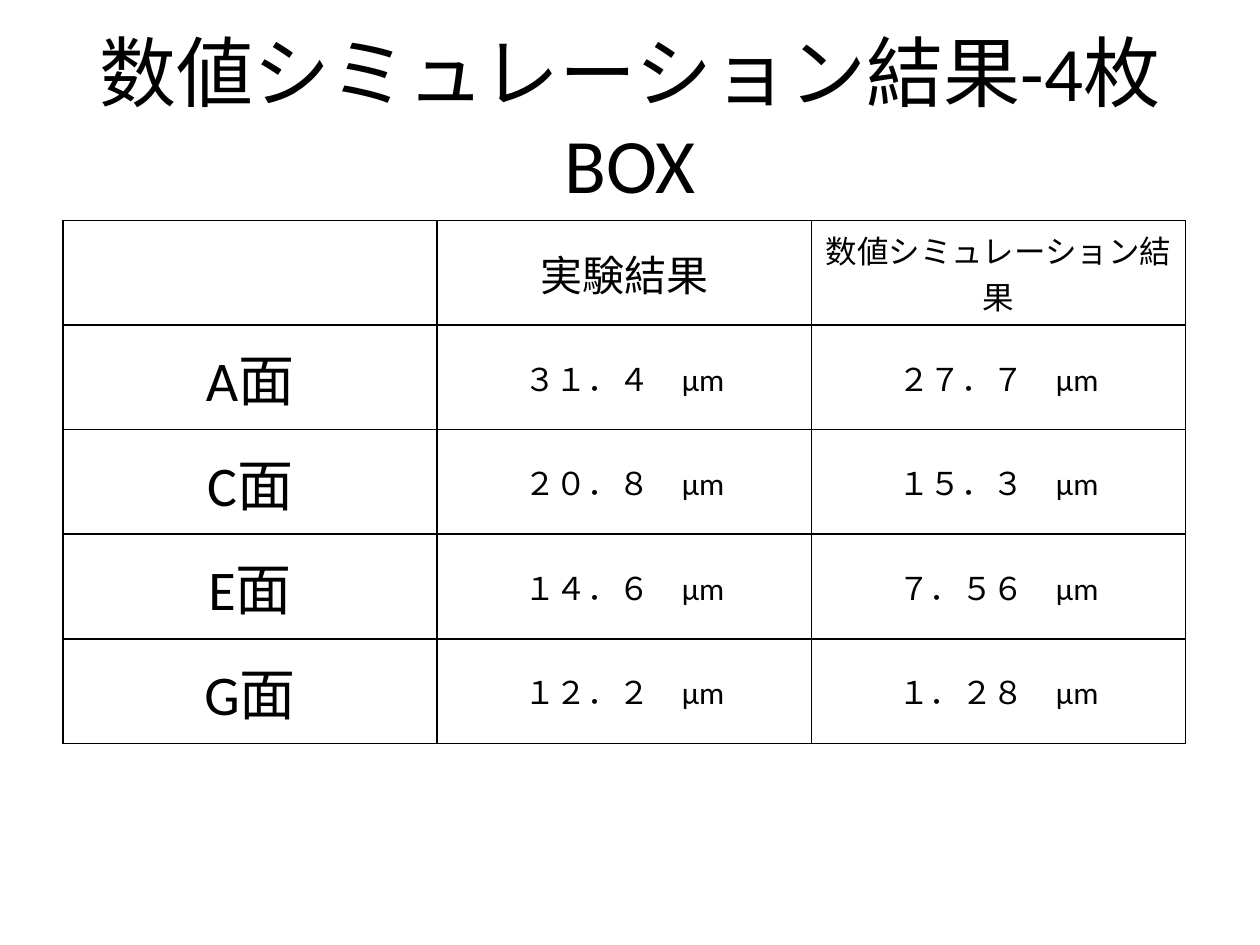
from lxml import etree
from pptx import Presentation
from pptx.dml.color import RGBColor
from pptx.enum.text import MSO_ANCHOR, PP_ALIGN
from pptx.oxml.ns import qn
from pptx.util import Inches, Pt

CENTER = PP_ALIGN.CENTER
MIDDLE = MSO_ANCHOR.MIDDLE
TITLE_ONLY = 5


def color(hex_string):
    return RGBColor.from_string(hex_string)


class SlideBuilder:
    font_name = "Calibri"
    ink = "000000"
    paper = "FFFFFF"
    border_width = Pt(1)

    def __init__(self, slide):
        self.slide = slide

    def set_text(self, frame, text, size):
        paragraph = frame.paragraphs[0]
        paragraph.text = text
        paragraph.alignment = CENTER
        paragraph.font.name = self.font_name
        paragraph.font.size = Pt(size)
        paragraph.font.color.rgb = color(self.ink)

    def title(self, text, left, top, width, height, size):
        title = self.slide.shapes.title
        title.left, title.top = Inches(left), Inches(top)
        title.width, title.height = Inches(width), Inches(height)
        title.text_frame.word_wrap = True
        title.text_frame.vertical_anchor = MIDDLE
        self.set_text(title.text_frame, text, size)

    def border(self, cell):
        properties = cell._tc.get_or_add_tcPr()
        for index, side in enumerate(("a:lnL", "a:lnR", "a:lnT", "a:lnB")):
            line = etree.Element(qn(side), w=str(self.border_width))
            fill = etree.SubElement(line, qn("a:solidFill"))
            etree.SubElement(fill, qn("a:srgbClr"), val=self.ink)
            properties.insert(index, line)

    def table(self, rows, sizes, left, top, column_width, row_height):
        row_count, column_count = len(rows), len(rows[0])
        table = self.slide.shapes.add_table(
            row_count, column_count, Inches(left), Inches(top),
            Inches(column_width * column_count),
            Inches(row_height * row_count)).table
        table.first_row = False
        table.horz_banding = False
        for column in table.columns:
            column.width = Inches(column_width)
        for row_index, texts in enumerate(rows):
            table.rows[row_index].height = Inches(row_height)
            for column_index, text in enumerate(texts):
                cell = table.cell(row_index, column_index)
                cell.fill.solid()
                cell.fill.fore_color.rgb = color(self.paper)
                cell.vertical_anchor = MIDDLE
                self.border(cell)
                if text:
                    size = sizes[min(row_index, 1)][column_index]
                    self.set_text(cell.text_frame, text, size)


def main():
    presentation = Presentation()
    presentation.slide_width = Inches(10)
    presentation.slide_height = Inches(7.5)
    layout = presentation.slide_layouts[TITLE_ONLY]
    builder = SlideBuilder(presentation.slides.add_slide(layout))

    # Title
    builder.title("数値シミュレーション結果-4枚BOX", 0.5, 0.3, 9, 1.25, size=44)

    # Experiment against simulation, one row per face
    measurements = [
        ("A面", "３１．４", "２７．７"),
        ("C面", "２０．８", "１５．３"),
        ("E面", "１４．６", "７．５６"),
        ("G面", "１２．２", "１．２８"),
    ]
    rows = [("", "実験結果", "数値シミュレーション結果")]
    rows += [(face, f"{experiment}　μm", f"{simulation}　μm")
             for face, experiment, simulation in measurements]
    header_sizes, body_sizes = (18, 24, 18), (32, 18, 18)
    builder.table(rows, (header_sizes, body_sizes), left=0.5, top=1.75,
                  column_width=2.97, row_height=0.83)

    presentation.save("out.pptx")


if __name__ == "__main__":
    main()
